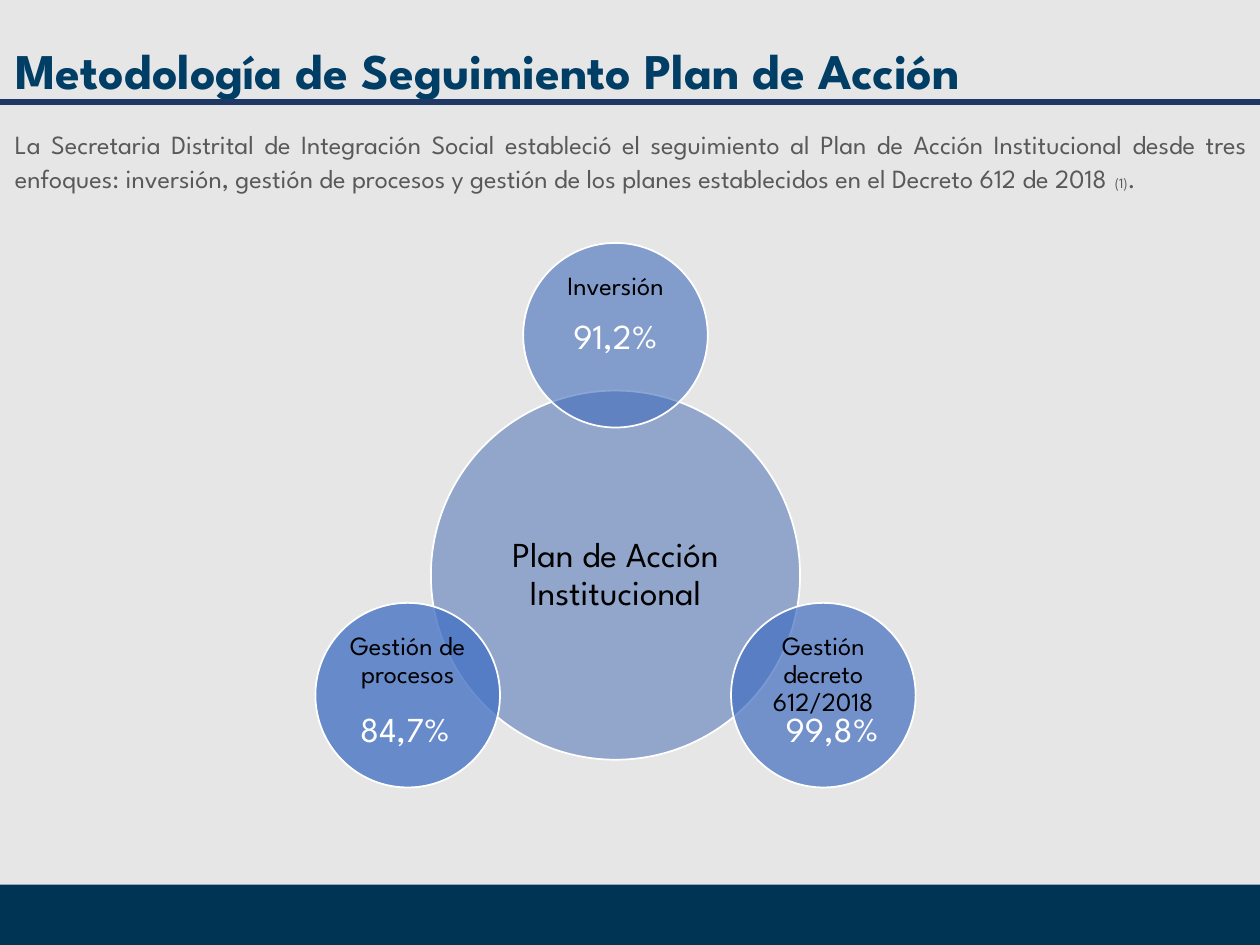
import math
from dataclasses import dataclass

import pptx
import pptx.dml.color
import pptx.enum.shapes
import pptx.enum.text
import pptx.oxml
import pptx.oxml.ns
import pptx.util

RGBColor = pptx.dml.color.RGBColor
Anchor = pptx.enum.text.MSO_ANCHOR
Align = pptx.enum.text.PP_ALIGN
AutoSize = pptx.enum.text.MSO_AUTO_SIZE
Shape = pptx.enum.shapes.MSO_SHAPE

BACKGROUND = RGBColor(0xE7, 0xE6, 0xE6)
FOOTER = RGBColor(0x00, 0x34, 0x54)
RULE = RGBColor(0x20, 0x38, 0x64)
TITLE = RGBColor(0x00, 0x3E, 0x65)
BODY = RGBColor(0x59, 0x59, 0x59)
BLACK = RGBColor(0x00, 0x00, 0x00)
WHITE = RGBColor(0xFF, 0xFF, 0xFF)
PLAN = RGBColor(0x3E, 0x67, 0xB2)

FONT = "League Spartan"
COLUMNS, ROWS = 100, 75
CELL = pptx.util.Inches(0.1)

APPROACHES = [
    ("Inversión", "91,2%", RGBColor(0x3F, 0x6B, 0xBA), 60, -90, (0, 0.1)),
    ("Gestión decreto 612/2018", "99,8%", RGBColor(0x41, 0x6E, 0xC0), 70, 30, (0.7, 2.7)),
    ("Gestión de procesos", "84,7%", RGBColor(0x46, 0x73, 0xC4), 80, 150, (-0.2, 2.7)),
]


@dataclass
class Box:
    left: float
    top: float
    width: float
    height: float

    def lengths(self):
        return [round(value * CELL) for value in (self.left, self.top, self.width, self.height)]

    def center(self):
        return self.left + self.width / 2, self.top + self.height / 2


def box_around(x, y, width, height):
    return Box(x - width / 2, y - height / 2, width, height)


def add_run(paragraph, text, size, color, bold=False):
    run = paragraph.add_run()
    run.text = text
    run.font.name = FONT
    run.font.size = pptx.util.Pt(size)
    run.font.bold = bold
    run.font.color.rgb = color


def add_text(slide, box, runs, color, align, spacing=1.0, inset=None, anchor=Anchor.TOP):
    frame = slide.shapes.add_textbox(*box.lengths()).text_frame
    frame.word_wrap = True
    frame.vertical_anchor = anchor
    if inset is not None:
        margin = pptx.util.Inches(inset)
        frame.margin_left = frame.margin_right = margin
        frame.margin_top = frame.margin_bottom = margin
    paragraph = frame.paragraphs[0]
    paragraph.alignment = align
    paragraph.line_spacing = spacing
    for text, size in runs:
        add_run(paragraph, text, size, color)


def add_circle(slide, x, y, diameter, color, opacity):
    box = box_around(x, y, diameter, diameter)
    shape = slide.shapes.add_shape(Shape.OVAL, *box.lengths())
    shape.shadow.inherit = False
    shape.fill.solid()
    shape.fill.fore_color.rgb = color
    color_element = shape.fill._xPr.find(".//" + pptx.oxml.ns.qn("a:srgbClr"))
    alpha = pptx.oxml.parse_xml(f'<a:alpha {pptx.oxml.ns.nsdecls("a")} val="{opacity * 1000}"/>')
    color_element.append(alpha)
    shape.line.color.rgb = WHITE
    shape.line.width = pptx.util.Pt(1)


def add_label(slide, x, y, diameter, text, size, inset, anchor):
    side = diameter / math.sqrt(2)
    add_text(slide, box_around(x, y, side, side), [(text, size)], BLACK,
             Align.CENTER, 0.9, inset, anchor)


def add_footer(slide, box):
    shape = slide.shapes.add_shape(Shape.RECTANGLE, *box.lengths())
    shape.shadow.inherit = False
    shape.fill.solid()
    shape.fill.fore_color.rgb = FOOTER
    shape.line.fill.background()


def add_heading(slide, box):
    title = slide.shapes.title
    title.left, title.top, title.width, title.height = box.lengths()
    frame = title.text_frame
    frame.word_wrap = True
    frame.auto_size = AutoSize.NONE
    frame.vertical_anchor = Anchor.MIDDLE
    paragraph = frame.paragraphs[0]
    paragraph.alignment = Align.LEFT
    add_run(paragraph, "Metodología de Seguimiento Plan de Acción", 28.5, TITLE, True)

    height = round((box.top + box.height) * CELL)
    rule = slide.shapes.add_connector(
        pptx.enum.shapes.MSO_CONNECTOR.STRAIGHT, 0, height, COLUMNS * CELL, height)
    rule.line.color.rgb = RULE
    rule.line.width = pptx.util.Pt(3)
    rule._element.spPr.append(
        pptx.oxml.parse_xml(f'<a:effectLst {pptx.oxml.ns.nsdecls("a")}/>'))


def add_introduction(slide, box):
    runs = [
        ("La Secretaria Distrital de Integración Social estableció el seguimiento al Plan de "
         "Acción Institucional desde tres enfoques: inversión, gestión de procesos y gestión "
         "de los planes establecidos en el Decreto 612 de 2018 ", 15),
        ("(1)", 8.2),
        (".", 15),
    ]
    add_text(slide, box, runs, BODY, Align.JUSTIFY, 1.07)


def add_radial_diagram(slide, box):
    x, y = box.center()
    diameter = box.width
    satellite = diameter / 2
    orbit = diameter * 0.65
    add_circle(slide, x, y, diameter, PLAN, 50)
    add_label(slide, x, y, diameter, "Plan de Acción Institucional", 20, 0.03, Anchor.MIDDLE)

    for name, value, color, opacity, angle, (shift_x, shift_y) in APPROACHES:
        center_x = x + orbit * math.cos(math.radians(angle))
        center_y = y + orbit * math.sin(math.radians(angle))
        add_circle(slide, center_x, center_y, satellite, color, opacity)
        add_label(slide, center_x, center_y, satellite, name, 15, 0.02, Anchor.TOP)
        value_box = box_around(center_x + shift_x, center_y + shift_y, 12, 4.4)
        add_text(slide, value_box, [(value, 20)], WHITE, Align.CENTER)


def main():
    presentation = pptx.Presentation()
    presentation.slide_width = COLUMNS * CELL
    presentation.slide_height = ROWS * CELL
    slide = presentation.slides.add_slide(presentation.slide_layouts.get_by_name("Title Only"))
    slide.background.fill.solid()
    slide.background.fill.fore_color.rgb = BACKGROUND
    add_footer(slide, Box(0, 70.2, COLUMNS, 4.8))
    add_heading(slide, Box(0.2, 3, 89.8, 5.1))
    add_radial_diagram(slide, Box(34.2, 31, 29.3, 29.3))
    add_introduction(slide, Box(0.2, 9.5, 99.8, 8.9))
    presentation.save("out.pptx")


if __name__ == "__main__":
    main()
